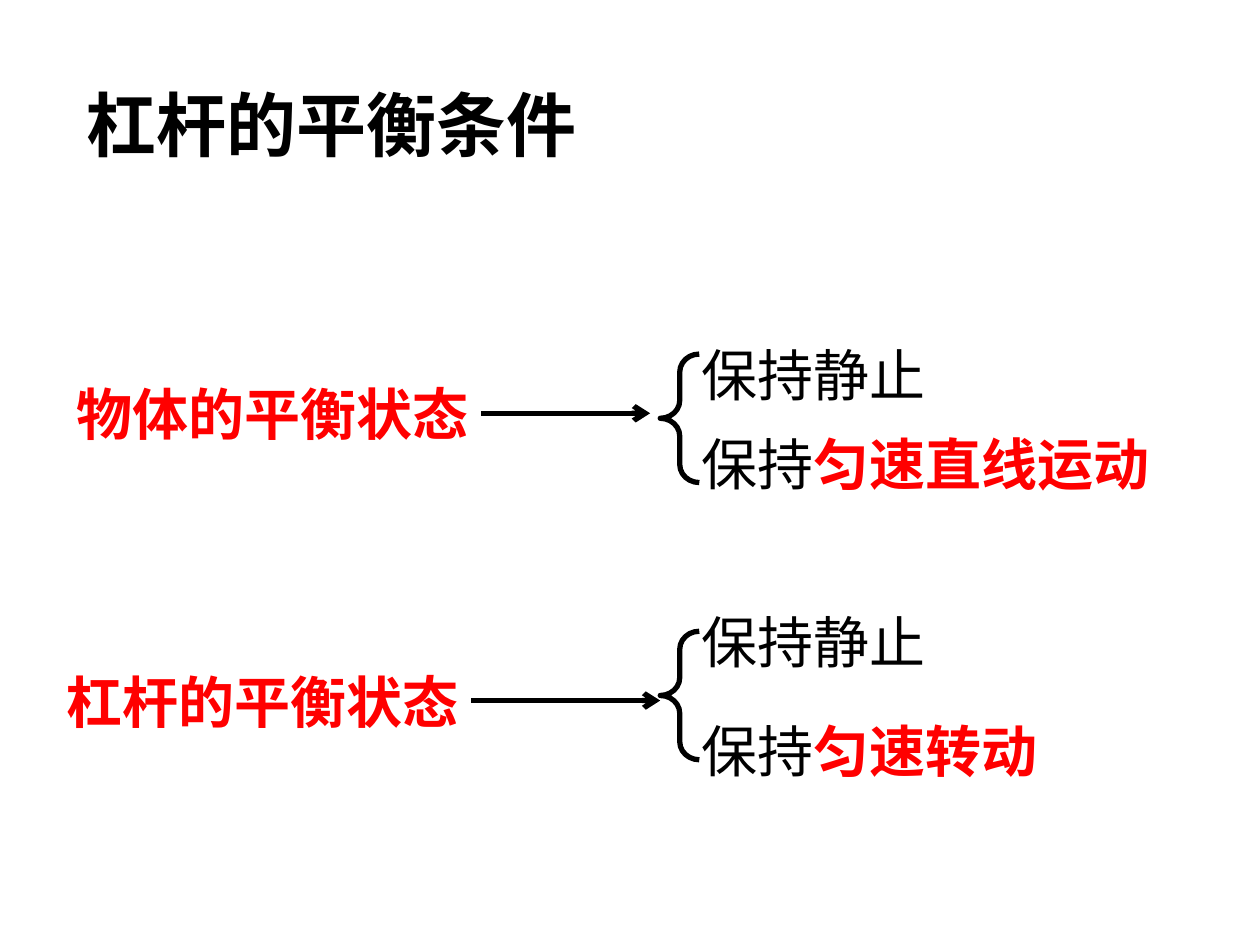
from lxml.etree import SubElement
from pptx import Presentation
from pptx.dml.color import RGBColor
from pptx.enum.shapes import MSO_CONNECTOR, MSO_SHAPE
from pptx.oxml.ns import qn
from pptx.util import Inches, Pt

BLACK, RED = "000000", "FF0000"
CJK_FONT = "Noto Sans CJK SC"
TITLE = "杠杆的平衡条件"
STATES = [
    {"name": "物体的平衡状态", "name_at": (0.51, 2.96), "name_width": 3.7,
     "arrow": (3.82, 5.16, 3.28), "brace_top": 2.81,
     "cases": [("保持静止", "", 2.05, 2.65), ("保持", "匀速直线运动", 4.02, 3.36)]},
    {"name": "杠杆的平衡状态", "name_at": (0.43, 5.25), "name_width": 3.54,
     "arrow": (3.74, 5.24, 5.56), "brace_top": 5.01,
     "cases": [("保持静止", "", 2.05, 4.77), ("保持", "匀速转动", 2.91, 5.64)]},
]
BRACE_LEFT, BRACE_WIDTH, BRACE_HEIGHT = 5.24, 0.31, 1.02
CASE_LEFT, LINE_HEIGHT = 5.47, 0.64


def color(value):
    return RGBColor.from_string(value)


def add_text(page, left, top, width, height, spans, size=32, font="Calibri"):
    box = page.shapes.add_textbox(*map(Inches, (left, top, width, height)))
    box.text_frame.word_wrap = True
    para = box.text_frame.paragraphs[0]
    for text, fill, bold in spans:
        span = para.add_run()
        span.text = text
        span.font.name = font
        span.font.size = Pt(size)
        span.font.bold = bold
        span.font.color.rgb = color(fill)
        SubElement(span.font._element, qn("a:ea"), typeface=CJK_FONT)


def style_line(line):
    line.color.rgb = color(BLACK)
    line.width = Pt(3)


def add_arrow(page, start, end, height):
    arrow = page.shapes.add_connector(
        MSO_CONNECTOR.STRAIGHT, *map(Inches, (start, height, end, height)))
    style_line(arrow.line)
    SubElement(arrow.line._get_or_add_ln(), qn("a:tailEnd"), type="arrow")
    SubElement(arrow._element.spPr, qn("a:effectLst"))


def add_brace(page, top):
    brace = page.shapes.add_shape(
        MSO_SHAPE.LEFT_BRACE,
        *map(Inches, (BRACE_LEFT, top, BRACE_WIDTH, BRACE_HEIGHT)))
    brace.adjustments[0] = 0.46
    brace.adjustments[1] = 0.5
    brace.shadow.inherit = False
    brace.fill.background()
    style_line(brace.line)


def add_state(page, state):
    add_text(page, *state["name_at"], state["name_width"], LINE_HEIGHT,
             [(state["name"], RED, True)])
    for plain, stressed, width, top in state["cases"]:
        spans = [(plain, BLACK, False)]
        if stressed:
            spans.append((stressed, RED, True))
        add_text(page, CASE_LEFT, top, width, LINE_HEIGHT, spans)
    add_brace(page, state["brace_top"])
    add_arrow(page, *state["arrow"])


def main():
    deck = Presentation()
    deck.slide_width, deck.slide_height = Inches(10), Inches(7.5)
    page = deck.slides.add_slide(deck.slide_layouts[6])
    add_text(page, 0.59, 0.6, 4.57, 0.77, [(TITLE, BLACK, True)], 40, CJK_FONT)
    for state in STATES:
        add_state(page, state)
    deck.save("out.pptx")


if __name__ == "__main__":
    main()
